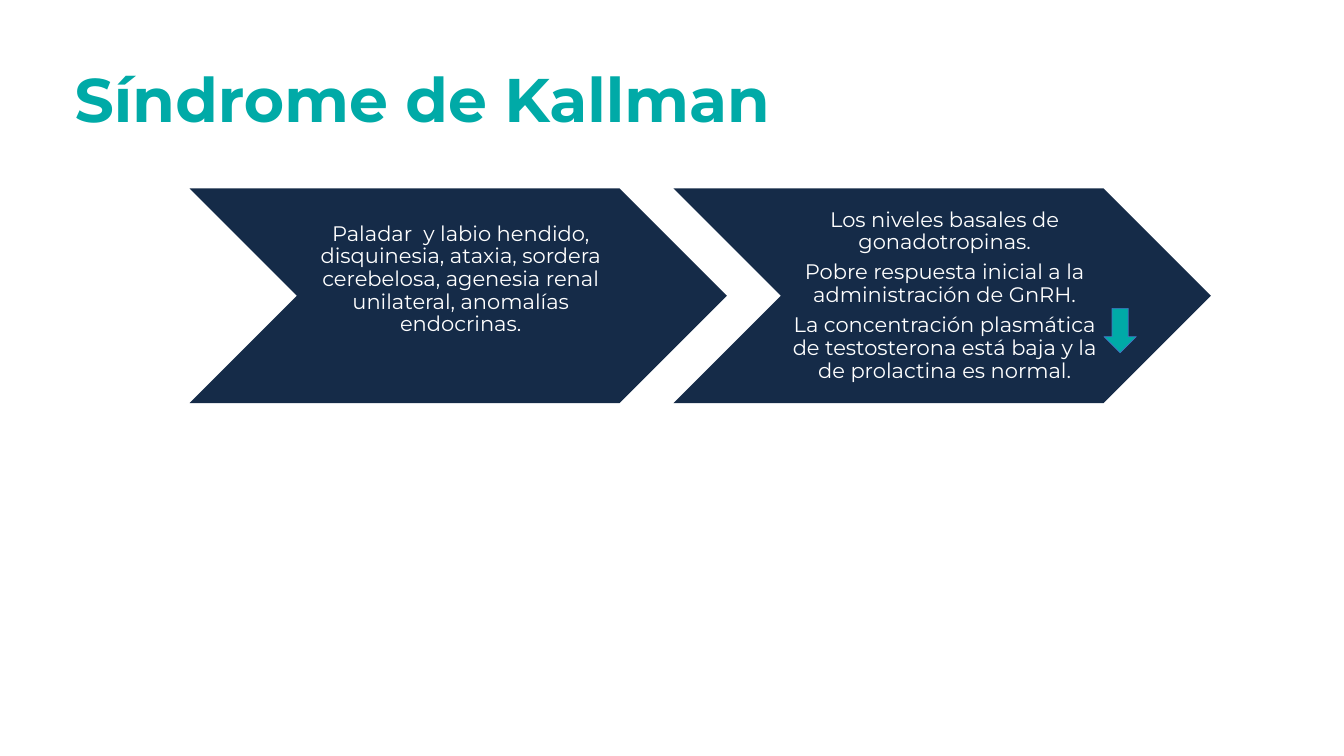
from dataclasses import dataclass

from pptx import Presentation
from pptx.dml.color import RGBColor
from pptx.enum.shapes import MSO_SHAPE as Shape
from pptx.enum.text import MSO_ANCHOR as Anchor, PP_ALIGN as Align
from pptx.util import Inches, Pt


@dataclass(frozen=True)
class Theme:
    font: str = "Montserrat"
    navy: RGBColor = RGBColor(0x15, 0x2B, 0x48)
    teal: RGBColor = RGBColor(0x00, 0xAA, 0xA7)
    blue: RGBColor = RGBColor(0x44, 0x72, 0xC4)
    white: RGBColor = RGBColor(0xFF, 0xFF, 0xFF)
    title_size: int = 44
    body_size: int = 15
    line_spacing: float = 0.9
    space_after: float = 5.25


class SlideBuilder:
    """Adds themed elements to one slide."""

    def __init__(self, slide, theme):
        self.slide = slide
        self.theme = theme

    def format(self, paragraph, size, color, align, bold=False):
        paragraph.alignment = align
        paragraph.line_spacing = self.theme.line_spacing
        paragraph.font.name = self.theme.font
        paragraph.font.size = Pt(size)
        paragraph.font.color.rgb = color
        paragraph.font.bold = bold

    def title(self, text, left, top, width, height):
        title = self.slide.shapes.title
        title.left, title.top = Inches(left), Inches(top)
        title.width, title.height = Inches(width), Inches(height)
        frame = title.text_frame
        frame.text = text
        frame.vertical_anchor = Anchor.MIDDLE
        self.format(frame.paragraphs[0], self.theme.title_size,
                    self.theme.teal, Align.LEFT, bold=True)

    def shape(self, kind, left, top, width, height, fill):
        shape = self.slide.shapes.add_shape(
            kind, Inches(left), Inches(top), Inches(width), Inches(height))
        shape.shadow.inherit = False
        shape.fill.solid()
        shape.fill.fore_color.rgb = fill
        shape.line.fill.background()
        return shape

    def chevron(self, lines, left, top, width, height, bottom_inset):
        shape = self.shape(Shape.CHEVRON, left, top, width, height, self.theme.navy)
        frame = shape.text_frame
        frame.word_wrap = True
        frame.vertical_anchor = Anchor.MIDDLE
        frame.margin_left = Inches(0.07)
        frame.margin_top = frame.margin_right = Inches(0.02)
        frame.margin_bottom = Inches(bottom_inset)
        frame.text = "\n".join(lines)
        for paragraph in frame.paragraphs:
            self.format(paragraph, self.theme.body_size, self.theme.white, Align.CENTER)
            paragraph.space_after = Pt(self.theme.space_after)

    def down_arrow(self, left, top, width, height):
        arrow = self.shape(Shape.DOWN_ARROW, left, top, width, height, self.theme.teal)
        arrow.line.color.rgb = self.theme.blue
        arrow.line.width = Pt(0.5)


def main():
    presentation = Presentation()
    presentation.slide_width = Inches(13.33)
    presentation.slide_height = Inches(7.5)
    slide = presentation.slides.add_slide(presentation.slide_layouts[5])
    builder = SlideBuilder(slide, Theme())

    builder.title("Síndrome de Kallman", 0.64, 0.29, 11.5, 1.45)
    steps = [
        (["Paladar  y labio hendido, disquinesia, ataxia, sordera cerebelosa, "
          "agenesia renal unilateral, anomalías endocrinas."], 0.34),
        (["Los niveles basales de gonadotropinas.",
          "Pobre respuesta inicial a la administración de GnRH.",
          "La concentración plasmática de testosterona está baja "
          "y la de prolactina es normal."], 0.02),
    ]
    for index, (lines, bottom_inset) in enumerate(steps):
        builder.chevron(lines, 1.88 + 4.8 * index, 1.87, 5.33, 2.13, bottom_inset)
    builder.down_arrow(10.95, 3.06, 0.32, 0.44)

    presentation.save("out.pptx")


if __name__ == "__main__":
    main()
